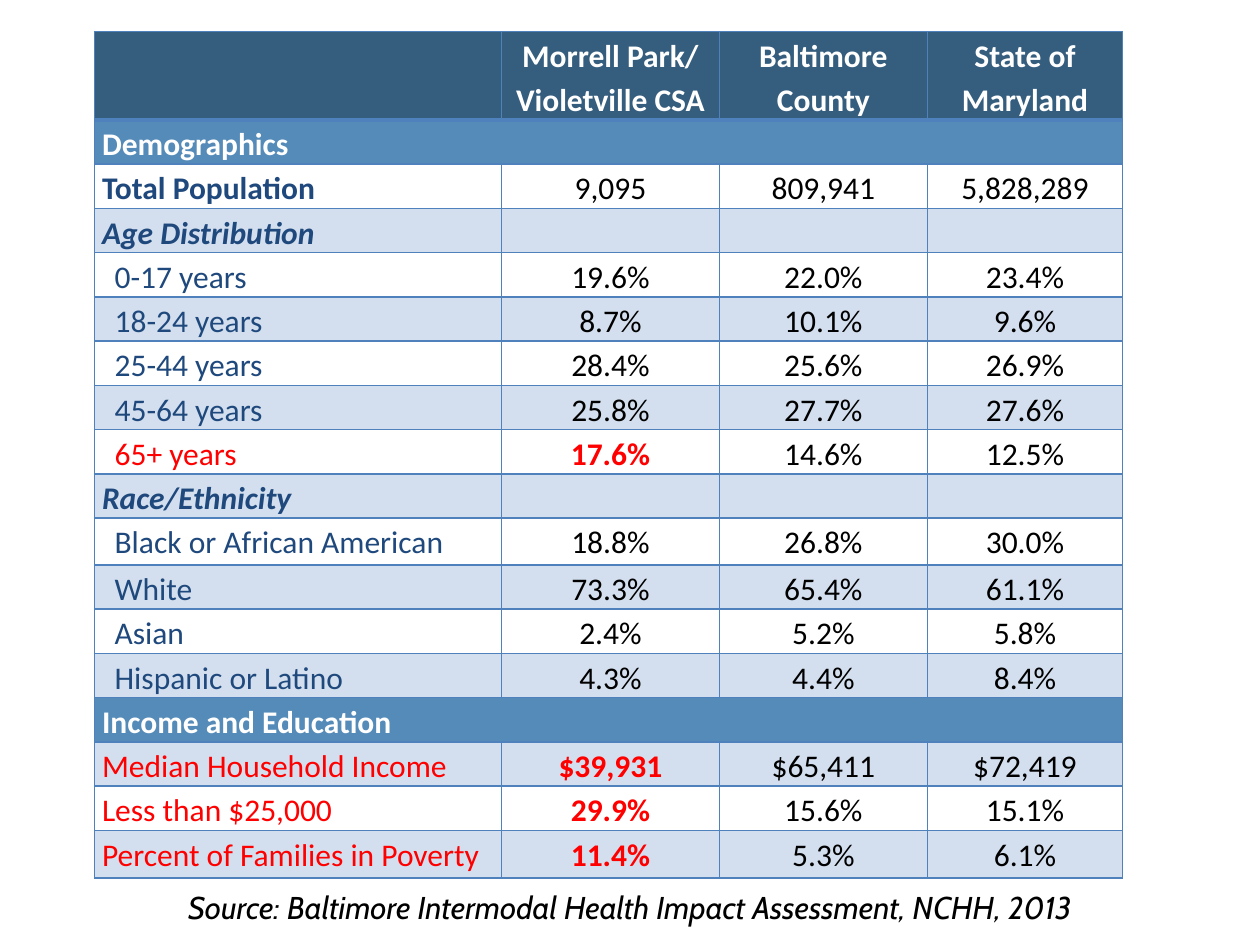
from dataclasses import dataclass

from lxml.etree import SubElement
from pptx import Presentation
from pptx.dml.color import RGBColor as Color
from pptx.enum.text import PP_ALIGN as Align
from pptx.oxml.ns import qn
from pptx.util import Inches, Pt


@dataclass(frozen=True)
class Theme:
    table_font: str = "Calibri"
    source_font: str = "Cabin"
    size: int = 18
    line_spacing: float = 1.15
    header: str = "355D7E"
    section: str = "558BB8"
    band: str = "D3DFEE"
    border: str = "4F81BD"
    label: str = "1F497D"
    alert: str = "FF0000"
    black: str = "000000"
    white: str = "FFFFFF"
    thin: float = 1
    thick: float = 2.25


HEADINGS = ["", "Morrell Park/\nVioletville CSA", "Baltimore County", "State of Maryland"]
COLUMN_WIDTHS = [3.23, 1.73, 1.65, 1.55]
ROW_HEIGHT = 0.33
SPECIAL_HEIGHTS = {0: 0.65, 10: 0.37, 15: 0.35, 17: 0.38}

# Row kind, label, then one value per place
ROWS = [
    ("section", "Demographics"),
    ("total", "Total Population", "9,095", "809,941", "5,828,289"),
    ("group", "Age Distribution", "", "", ""),
    ("item", "0-17 years", "19.6%", "22.0%", "23.4%"),
    ("item", "18-24 years", "8.7%", "10.1%", "9.6%"),
    ("item", "25-44 years", "28.4%", "25.6%", "26.9%"),
    ("item", "45-64 years", "25.8%", "27.7%", "27.6%"),
    ("alert item", "65+ years", "17.6%", "14.6%", "12.5%"),
    ("group", "Race/Ethnicity", "", "", ""),
    ("item", "Black or African American", "18.8%", "26.8%", "30.0%"),
    ("item", "White", "73.3%", "65.4%", "61.1%"),
    ("item", "Asian", "2.4%", "5.2%", "5.8%"),
    ("item", "Hispanic or Latino", "4.3%", "4.4%", "8.4%"),
    ("section", "Income and Education"),
    ("alert", "Median Household Income", "$39,931", "$65,411", "$72,419"),
    ("alert", "Less than $25,000", "29.9%", "15.6%", "15.1%"),
    ("alert", "Percent of Families in Poverty", "11.4%", "5.3%", "6.1%"),
]


class SlideBuilder:
    def __init__(self, slide, theme):
        self.slide = slide
        self.theme = theme

    def style_paragraph(self, paragraph, font, color, bold=False, italic=False, align=Align.LEFT):
        paragraph.alignment = align
        paragraph.font.name = font
        paragraph.font.size = Pt(self.theme.size)
        paragraph.font.color.rgb = Color.from_string(color)
        paragraph.font.bold = bold
        paragraph.font.italic = italic

    def borders(self, cell, top, bottom):
        properties = cell._tc.get_or_add_tcPr()
        thin = self.theme.thin
        for side, width in (("L", thin), ("R", thin), ("T", top), ("B", bottom)):
            line = SubElement(properties, qn(f"a:ln{side}"), w=str(Pt(width)))
            fill = SubElement(line, qn("a:solidFill"))
            SubElement(fill, qn("a:srgbClr"), val=self.theme.border)

    def cell(self, cell, text, fill, color, bold=False, italic=False, align=Align.CENTER,
             indent=0, top=None, bottom=None):
        theme = self.theme
        self.borders(cell, top or theme.thin, bottom or theme.thin)
        if fill:
            cell.fill.solid()
            cell.fill.fore_color.rgb = Color.from_string(fill)
        else:
            cell.fill.background()
        cell.margin_left = cell.margin_right = Inches(0.06)
        cell.margin_top = cell.margin_bottom = 0
        cell.text_frame.text = text
        for paragraph in cell.text_frame.paragraphs:
            self.style_paragraph(paragraph, theme.table_font, color, bold, italic, align)
            paragraph.line_spacing = theme.line_spacing
            if indent:
                properties = paragraph._p.get_or_add_pPr()
                properties.set("marL", str(Inches(indent)))
                properties.set("indent", "0")

    def section_row(self, table, index, label):
        last = len(table.columns) - 1
        for column in range(last + 1):
            self.cell(table.cell(index, column), "" if column else label, self.theme.section,
                      self.theme.white, bold=True, align=Align.LEFT,
                      top=self.theme.thick if index == 1 else None)
        table.cell(index, 0).merge(table.cell(index, last))

    def data_row(self, table, index, kind, label, values):
        theme = self.theme
        alert = "alert" in kind
        fill = theme.band if index % 2 else None
        self.cell(table.cell(index, 0), label, fill, theme.alert if alert else theme.label,
                  bold=kind in ("total", "group"), italic=kind == "group", align=Align.LEFT,
                  indent=0.1 if "item" in kind else 0)
        for column, value in enumerate(values, 1):
            marked = alert and column == 1
            self.cell(table.cell(index, column), value, fill,
                      theme.alert if marked else theme.black, bold=marked)

    def table(self, left, top):
        heights = [SPECIAL_HEIGHTS.get(index, ROW_HEIGHT) for index in range(len(ROWS) + 1)]
        shape = self.slide.shapes.add_table(
            len(heights), len(COLUMN_WIDTHS), Inches(left), Inches(top),
            Inches(sum(COLUMN_WIDTHS)), Inches(sum(heights)))
        table = shape.table
        table.first_row = table.horz_banding = False
        for column, width in zip(table.columns, COLUMN_WIDTHS):
            column.width = Inches(width)
        for row, height in zip(table.rows, heights):
            row.height = Inches(height)

        for column, heading in enumerate(HEADINGS):
            self.cell(table.cell(0, column), heading, self.theme.header, self.theme.white,
                      bold=True, bottom=self.theme.thick)
        for index, (kind, label, *values) in enumerate(ROWS, 1):
            if kind == "section":
                self.section_row(table, index, label)
            else:
                self.data_row(table, index, kind, label, values)

    def source_note(self, text, left, top, width, height):
        box = self.slide.shapes.add_textbox(
            Inches(left), Inches(top), Inches(width), Inches(height))
        box.text_frame.word_wrap = True
        box.text_frame.text = text
        self.style_paragraph(box.text_frame.paragraphs[0], self.theme.source_font,
                             self.theme.black, italic=True, align=Align.CENTER)


def main():
    presentation = Presentation()
    presentation.slide_width = Inches(10)
    presentation.slide_height = Inches(7.5)
    slide = presentation.slides.add_slide(presentation.slide_layouts[6])
    builder = SlideBuilder(slide, Theme())

    # Community comparison table
    builder.table(0.75, 0.25)

    # Source line
    builder.source_note("Source: Baltimore Intermodal Health Impact Assessment, NCHH, 2013",
                        0, 7, 10, 0.4)

    presentation.save("out.pptx")


if __name__ == "__main__":
    main()
